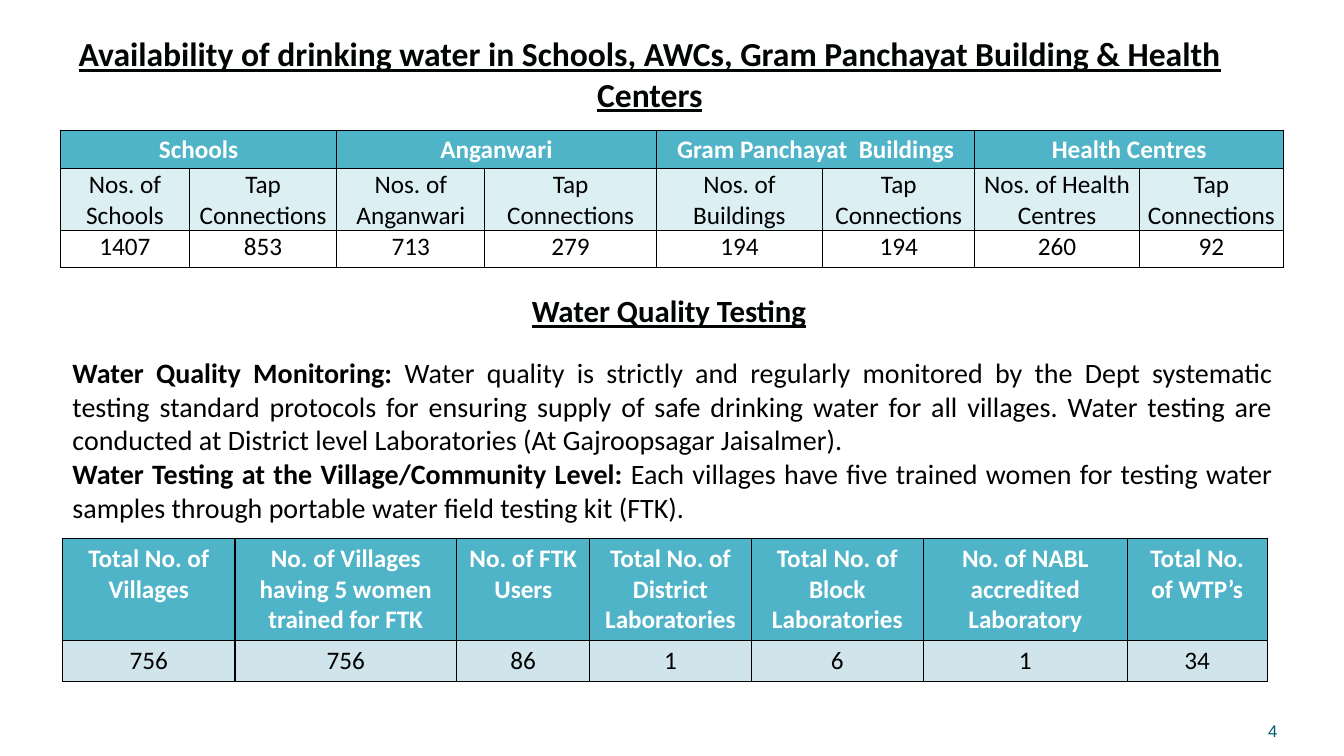
from lxml import etree
from pptx import Presentation
from pptx.dml.color import RGBColor
from pptx.enum.text import MSO_ANCHOR, PP_ALIGN
from pptx.oxml.ns import qn
from pptx.util import Inches, Pt

BLACK = RGBColor(0x00, 0x00, 0x00)
HEADING = RGBColor(0x02, 0x05, 0x05)
WHITE = RGBColor(0xFF, 0xFF, 0xFF)
TEAL = RGBColor(0x50, 0xB4, 0xC8)
PALE_TEAL = RGBColor(0xDC, 0xF0, 0xF4)
PALE_BLUE = RGBColor(0xD0, 0xE5, 0xEB)
PAGE_BLUE = RGBColor(0x04, 0x5C, 0x75)


def add_run(paragraph, text, size, color, bold=False, underline=False, font="Calibri"):
    run = paragraph.add_run()
    run.text = text
    run.font.name = font
    run.font.size = Pt(size)
    run.font.color.rgb = color
    run.font.bold = bold
    run.font.underline = underline


def fill_cell(cell, text, fill, color, bold, border):
    if fill is None:
        cell.fill.background()
    else:
        cell.fill.solid()
        cell.fill.fore_color.rgb = fill
    properties = cell._tc.get_or_add_tcPr()
    for position, side in enumerate(("a:lnL", "a:lnR", "a:lnT", "a:lnB")):
        line = etree.Element(qn(side), w=str(Pt(border)))
        solid = etree.SubElement(line, qn("a:solidFill"))
        etree.SubElement(solid, qn("a:srgbClr"), val=str(BLACK))
        properties.insert(position, line)
    for number, part in enumerate(text.split("\n")):
        frame = cell.text_frame
        paragraph = frame.add_paragraph() if number else frame.paragraphs[0]
        paragraph.alignment = PP_ALIGN.CENTER
        add_run(paragraph, part, 18, color, bold)


prs = Presentation()
prs.slide_width, prs.slide_height = Inches(13.33), Inches(7.5)
slide = prs.slides.add_slide(prs.slide_layouts[5])

# Title
title = slide.shapes.title
title.left, title.top = Inches(0.54), Inches(0.28)
title.width, title.height = Inches(11.81), Inches(0.55)
title.text_frame.vertical_anchor = MSO_ANCHOR.TOP
title.text_frame.paragraphs[0].alignment = PP_ALIGN.CENTER
add_run(title.text_frame.paragraphs[0],
        "Availability of drinking water in Schools, AWCs, Gram Panchayat Building & Health Centers",
        24, HEADING, True, True)

# Tap connections and water testing tables
TAP = "Tap\nConnections"
connection_rows = [
    ["Schools", "", "Anganwari", "", "Gram Panchayat  Buildings", "", "Health Centres", ""],
    ["Nos. of\nSchools", TAP, "Nos. of Anganwari", TAP,
     "Nos. of Buildings", TAP, "Nos. of Health Centres", TAP],
    ["1407", "853", "713", "279", "194", "194", "260", "92"],
]
testing_rows = [
    ["Total No. of Villages", "No. of Villages having 5 women trained for FTK",
     "No. of FTK Users", "Total No. of District Laboratories",
     "Total No. of Block Laboratories", "No. of NABL accredited Laboratory",
     "Total No. of WTP’s"],
    ["756", "756", "86", "1", "6", "1", "34"],
]
tables = []
for rows, left, top, widths, heights, fills, border in (
    (connection_rows, 0.6, 1.29, (1.28, 1.46, 1.47, 1.7, 1.65, 1.51, 1.63, 1.43),
     (0.38, 0.62, 0.36), (TEAL, PALE_TEAL, None), 0.75),
    (testing_rows, 0.62, 5.34, (1.71, 2.2, 1.32, 1.6, 1.71, 2.02, 1.39),
     (1.0, 0.4), (TEAL, PALE_BLUE), 1),
):
    table = slide.shapes.add_table(len(rows), len(widths), Inches(left), Inches(top),
                                   Inches(sum(widths)), Inches(sum(heights))).table
    for column, width in zip(table.columns, widths):
        column.width = Inches(width)
    for r, (texts, height, fill) in enumerate(zip(rows, heights, fills)):
        table.rows[r].height = Inches(height)
        for c, text in enumerate(texts):
            fill_cell(table.cell(r, c), text, fill, BLACK if r else WHITE, r == 0, border)
    tables.append(table)

# Tight cells and paired headings in the connections table
connections = tables[0]
for r in range(3):
    for c in range(8):
        cell = connections.cell(r, c)
        cell.margin_left = cell.margin_right = cell.margin_top = Inches(0.01)
        cell.margin_bottom = 0
        cell.vertical_anchor = MSO_ANCHOR.MIDDLE if r < 2 else MSO_ANCHOR.TOP
for c in range(0, 8, 2):
    connections.cell(0, c).merge(connections.cell(0, c + 1))

# Section heading
heading = slide.shapes.add_textbox(Inches(0.73), Inches(2.85), Inches(11.81), Inches(0.44))
heading.text_frame.word_wrap = True
heading.text_frame.paragraphs[0].alignment = PP_ALIGN.CENTER
add_run(heading.text_frame.paragraphs[0], "Water Quality Testing", 22, HEADING, True, True)

# Water quality description
description = slide.shapes.add_textbox(Inches(0.62), Inches(3.48), Inches(12.1), Inches(1.78))
description.text_frame.word_wrap = True
for number, (label, detail) in enumerate((
    ("Water Quality Monitoring:",
     " Water quality is strictly and regularly monitored by the Dept systematic testing "
     "standard protocols for ensuring supply of safe drinking water for all villages. "
     "Water testing are conducted at District level Laboratories (At Gajroopsagar Jaisalmer)."),
    ("Water Testing at the Village/Community Level: ",
     "Each villages have five trained women for testing water samples through portable "
     "water field testing kit (FTK)."),
)):
    frame = description.text_frame
    paragraph = frame.add_paragraph() if number else frame.paragraphs[0]
    paragraph.alignment = PP_ALIGN.JUSTIFY
    add_run(paragraph, label, 20, BLACK, True)
    add_run(paragraph, detail, 20, BLACK)

# Page number
page = slide.shapes.add_textbox(Inches(11.56), Inches(6.95), Inches(1.11), Inches(0.4))
frame = page.text_frame
frame.word_wrap = True
frame.margin_left = frame.margin_right = frame.margin_top = frame.margin_bottom = 0
frame.vertical_anchor = MSO_ANCHOR.BOTTOM
frame.paragraphs[0].alignment = PP_ALIGN.RIGHT
add_run(frame.paragraphs[0], "4", 12, PAGE_BLUE, font="Arial")

prs.save("out.pptx")
